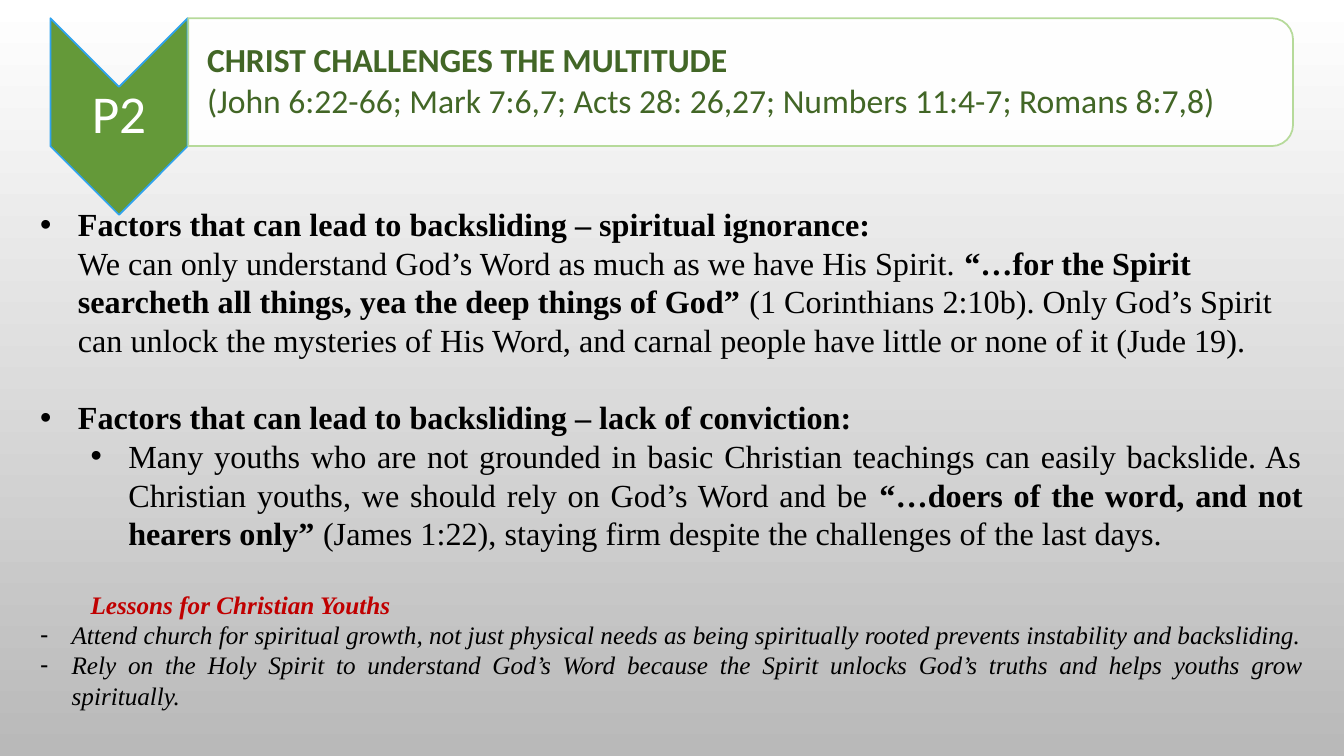
from lxml.etree import SubElement
from pptx import Presentation
from pptx.dml.color import RGBColor
from pptx.enum.shapes import MSO_SHAPE
from pptx.enum.text import MSO_ANCHOR, PP_ALIGN
from pptx.oxml.ns import qn
from pptx.util import Pt

COLORS = {
    "top": "FFFFFF", "bottom": "B9B9B9", "green": "649939", "blue": "2FA3EE",
    "pale": "B6DA9A", "white": "FFFFFF", "title": "426626", "black": "000000",
    "red": "C00000",
}
BADGE = [{"spans": [("P2", False)], "align": PP_ALIGN.CENTER}]
HEADING = [
    {"spans": [("CHRIST CHALLENGES THE MULTITUDE", True)], "after": 3.6},
    {"spans": [("(John 6:22-66; Mark 7:6,7; Acts 28: 26,27; Numbers 11:4-7; Romans 8:7,8)", False)]},
]
POINT = {"indent": 27, "hang": 27, "bullet": "•"}
LESSON = {"indent": 22.5, "hang": 22.5, "bullet": "-", "size": 18, "italic": True,
          "align": PP_ALIGN.JUSTIFY}
BODY = [
    {**POINT, "spans": [
        ("Factors that can lead to backsliding – spiritual ignorance:\v", True),
        ("We can only understand God’s Word as much as we have His Spirit. ", False),
        ("“…for the Spirit searcheth all things, yea the deep things of God”", True),
        (" (1 Corinthians 2:10b). Only God’s Spirit can unlock the mysteries of His Word, "
         "and carnal people have little or none of it (Jude 19).", False)]},
    {**POINT, "align": PP_ALIGN.JUSTIFY, "before": 27.6, "spans": [
        ("Factors that can lead to backsliding – lack of conviction:", True)]},
    {**POINT, "align": PP_ALIGN.JUSTIFY, "indent": 63, "level": 1, "spans": [
        ("Many youths who are not grounded in basic Christian teachings can easily backslide. "
         "As Christian youths, we should rely on God’s Word and be ", False),
        ("“…doers of the word, and not hearers only”", True),
        (" (James 1:22), staying firm despite the challenges of the last days.", False)]},
    {"indent": 36, "level": 1, "size": 18, "italic": True, "color": "red", "before": 26.4,
     "align": PP_ALIGN.JUSTIFY, "spans": [("Lessons for Christian Youths", True)]},
    {**LESSON, "spans": [
        ("Attend church for spiritual growth, not just physical needs as being spiritually "
         "rooted prevents instability and backsliding.", False)]},
    {**LESSON, "spans": [
        ("Rely on the Holy Spirit to understand God’s Word because the Spirit unlocks God’s "
         "truths and helps youths grow spiritually.", False)]},
]


def rgb(name):
    """Return the named colour."""
    return RGBColor.from_string(COLORS[name])


def add_turned(page, kind, left, top, width, height, fill, line):
    """Add a shape turned a quarter clockwise that covers the given area."""
    shift = (width - height) / 2
    shape = page.shapes.add_shape(
        kind, Pt(left + shift), Pt(top - shift), Pt(height), Pt(width))
    shape.rotation = 90
    shape.shadow.inherit = False
    shape.fill.solid()
    shape.fill.fore_color.rgb = rgb(fill)
    shape.line.color.rgb = rgb(line)
    shape.line.width = Pt(1.25)
    return shape


def add_text(page, paragraphs, area, *, font, size, color, insets,
             anchor=MSO_ANCHOR.TOP, spacing=None):
    """Add a text box whose paragraphs may override the shared format."""
    box = page.shapes.add_textbox(*map(Pt, area))
    frame = box.text_frame
    frame.word_wrap = True
    frame.vertical_anchor = anchor
    frame.margin_left, frame.margin_top, frame.margin_right, frame.margin_bottom = map(Pt, insets)
    for index, item in enumerate(paragraphs):
        para = frame.paragraphs[0] if index == 0 else frame.add_paragraph()
        para.level = item.get("level", 0)
        para.alignment = item.get("align", PP_ALIGN.LEFT)
        para.line_spacing = spacing
        para.space_before = Pt(item.get("before", 0))
        para.space_after = Pt(item.get("after", 0))
        properties = para._p.get_or_add_pPr()
        properties.set("marL", str(Pt(item.get("indent", 0))))
        properties.set("indent", str(-Pt(item.get("hang", 0))))
        if "bullet" in item:
            SubElement(properties, qn("a:buFont"), typeface="Arial")
            SubElement(properties, qn("a:buChar"), char=item["bullet"])
        for text, bold in item["spans"]:
            for part_index, part in enumerate(text.split("\v")):
                if part_index:
                    para.add_line_break()
                if not part:
                    continue
                span = para.add_run()
                span.text = part
                span.font.name = font
                span.font.size = Pt(item.get("size", size))
                span.font.bold = bold
                span.font.italic = item.get("italic", False)
                span.font.color.rgb = rgb(item.get("color", color))
    return box


def main():
    """Build the slide."""
    deck = Presentation()
    deck.slide_width, deck.slide_height = Pt(960), Pt(540)
    page = deck.slides.add_slide(deck.slide_layouts[6])
    backdrop = page.background.fill
    backdrop.gradient()
    backdrop.gradient_angle = 270
    for stop, name, position in zip(backdrop.gradient_stops, ("top", "bottom"), (0, 1)):
        stop.color.rgb = rgb(name)
        stop.position = position

    add_turned(page, MSO_SHAPE.CHEVRON, 36, 13, 98, 140.4, "green", "blue")
    add_text(page, BADGE, (36, 62, 98, 42), font="Calibri", size=38, color="white",
             insets=(2, 2, 2, 2), anchor=MSO_ANCHOR.MIDDLE, spacing=0.9)
    panel = add_turned(page, MSO_SHAPE.ROUND_2_SAME_RECTANGLE,
                       134.4, 13, 789.2, 91.4, "white", "pale")
    tint = panel.fill._xPr.find(".//" + qn("a:srgbClr"))
    SubElement(tint, qn("a:alpha"), val="90000")
    add_text(page, HEADING, (134.4, 17.5, 785, 82), font="Calibri", size=24, color="title",
             insets=(13.5, 1.5, 1.5, 1.5), anchor=MSO_ANCHOR.MIDDLE, spacing=0.9)
    add_text(page, BODY, (21.6, 142.6, 916.6, 424), font="Times New Roman", size=23,
             color="black", insets=(7.2, 3.6, 7.2, 3.6))
    deck.save("out.pptx")


if __name__ == "__main__":
    main()
